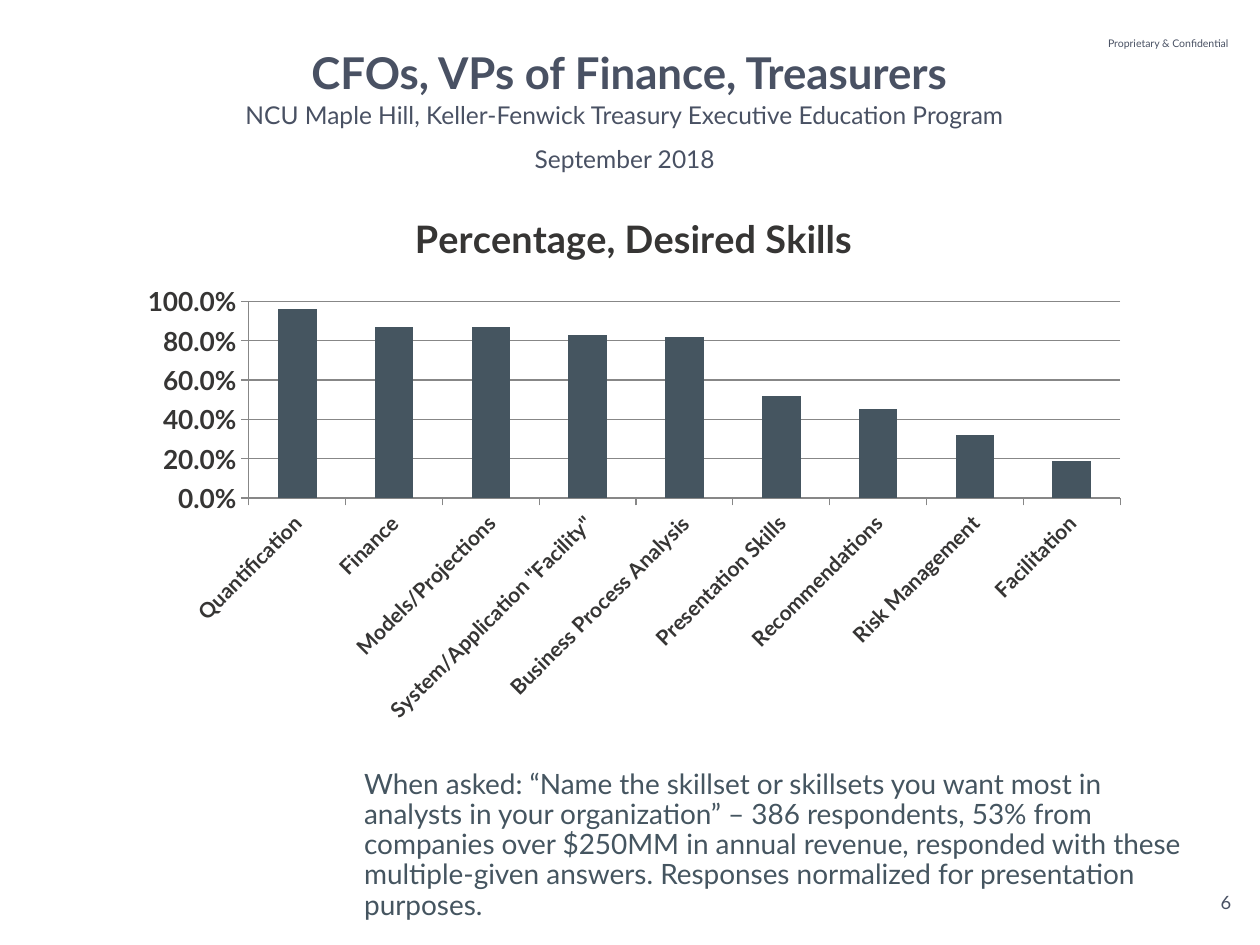
"""Build the desired treasury skills slide."""
import pptx
import pptx.util
import pptx.dml.color
import pptx.enum.text
import pptx.enum.chart
import pptx.chart.data
import pptx.oxml
import pptx.oxml.ns

Pt = pptx.util.Pt
Align = pptx.enum.text.PP_ALIGN
Anchor = pptx.enum.text.MSO_ANCHOR
HUES = {"head": "495163", "bar": "455560", "dark": "363534", "grid": "878787"}
SKILLS = {
    "Quantification": 0.96,
    "Finance": 0.87,
    "Models/Projections": 0.87,
    'System/Application "Facility"': 0.83,
    "Business Process Analysis": 0.82,
    "Presentation Skills": 0.52,
    "Recommendations": 0.45,
    "Risk Management": 0.32,
    "Facilitation": 0.19,
}


class Deck:
    """Hold the style and the current slide."""

    def __init__(self, face):
        """Start a deck with one title-only slide."""
        self.face = face
        self.show = pptx.Presentation()
        self.show.slide_width, self.show.slide_height = Pt(720), Pt(540)
        self.slide = self.show.slides.add_slide(self.show.slide_layouts[5])

    def hue(self, name):
        """Return a named colour."""
        return pptx.dml.color.RGBColor.from_string(HUES[name])

    def style(self, font, size, hue, bold=False):
        """Format a font."""
        font.name, font.size, font.bold = self.face, Pt(size), bold
        font.color.rgb = self.hue(hue)

    def fill(self, shape, box, lines, size, hue="head", bold=False,
             align=Align.LEFT, anchor=Anchor.TOP, space=None, gap=0, pad=None, wrap=True):
        """Place a shape and write its paragraphs."""
        shape.left, shape.top, shape.width, shape.height = map(Pt, box)
        frame = shape.text_frame
        frame.word_wrap, frame.vertical_anchor = wrap, anchor
        frame.auto_size = pptx.enum.text.MSO_AUTO_SIZE.NONE
        if pad is not None:
            frame.margin_left = frame.margin_right = Pt(pad)
            frame.margin_top = frame.margin_bottom = Pt(pad)
        frame.text = "\n".join(lines)
        for para in frame.paragraphs:
            para.alignment, para.line_spacing = align, space
            para.space_before = Pt(gap)
            self.style(para.font, size, hue, bold)

    def title(self, box, line, size):
        """Fill the title placeholder."""
        self.fill(self.slide.shapes.title, box, [line], size, bold=True,
                  align=Align.CENTER, space=0.9)

    def text(self, box, lines, size, **style):
        """Add a text box."""
        shape = self.slide.shapes.add_textbox(*map(Pt, box))
        self.fill(shape, box, lines, size, **style)

    def axis(self, axis, size):
        """Format the labels and line of an axis."""
        self.style(axis.tick_labels.font, size, "dark", True)
        axis.format.line.color.rgb = self.hue("grid")
        axis.major_tick_mark = pptx.enum.chart.XL_TICK_MARK.OUTSIDE
        axis.minor_tick_mark = pptx.enum.chart.XL_TICK_MARK.NONE

    def chart(self, box, title, data):
        """Add a column chart of shares."""
        table = pptx.chart.data.CategoryChartData(number_format="0.0%")
        table.categories = list(data)
        table.add_series("Series 1", list(data.values()))
        kind = pptx.enum.chart.XL_CHART_TYPE.COLUMN_CLUSTERED
        chart = self.slide.shapes.add_chart(kind, *map(Pt, box), table).chart
        self.style(chart.font, 18, "dark")
        chart.has_legend, chart.has_title = False, True
        chart.chart_title.include_in_layout = False
        frame = chart.chart_title.text_frame
        frame.text = title
        self.style(frame.paragraphs[0].font, 21.6, "dark", True)
        plot = chart.plots[0]
        plot.gap_width, plot.vary_by_categories = 150, False
        bars = plot.series[0].format.fill
        bars.solid()
        bars.fore_color.rgb = self.hue("bar")
        cats, vals = chart.category_axis, chart.value_axis
        self.axis(cats, 12)
        self.axis(vals, 15)
        body = cats.tick_labels.font._element.getparent().getparent().getparent()
        body.find(pptx.oxml.ns.qn("a:bodyPr")).set("rot", "-2700000")
        vals.minimum_scale, vals.maximum_scale, vals.major_unit = 0, 1, 0.2
        vals.tick_labels.number_format = "0.0%"
        vals.tick_labels.number_format_is_linked = False
        vals.has_major_gridlines = True
        vals.major_gridlines.format.line.color.rgb = self.hue("grid")
        self.inset(chart, x=0.12, y=0.21, w=0.86, h=0.36)

    def inset(self, chart, **parts):
        """Fix the inner plot area as shares of the chart."""
        area = chart._chartSpace.chart.plotArea
        for old in area.findall(pptx.oxml.ns.qn("c:layout")):
            area.remove(old)
        modes = "".join(f'<c:{key}Mode val="edge"/>' for key in "xy")
        sizes = "".join(f'<c:{key} val="{val}"/>' for key, val in parts.items())
        area.insert(0, pptx.oxml.parse_xml(
            f'<c:layout {pptx.oxml.ns.nsdecls("c")}><c:manualLayout>'
            f'<c:layoutTarget val="inner"/>{modes}{sizes}</c:manualLayout></c:layout>'))


def main():
    """Build and save the slide."""
    deck = Deck("Lato")
    deck.text((466, 10, 243, 29), ["Proprietary & Confidential"], 6,
              align=Align.RIGHT, anchor=Anchor.MIDDLE)
    deck.text((201, 436.5, 495, 166),
              ["When asked: “Name the skillset or skillsets you want most in analysts "
               "in your organization” – 386 respondents, 53% from companies over $250MM "
               "in annual revenue, responded with these multiple-given answers. "
               "Responses normalized for presentation purposes."],
              16, hue="bar", space=0.9, gap=10)
    deck.chart((72.7, 106.5, 579, 312.5), "Percentage, Desired Skills", SKILLS)
    deck.title((25, 26, 669, 63), "CFOs, VPs of Finance, Treasurers", 25)
    deck.text((107, 55.5, 500, 34),
              ["NCU Maple Hill, Keller-Fenwick Treasury Executive Education Program",
               "September 2018"],
              14, align=Align.CENTER, space=0.9, gap=10)
    deck.text((694, 509, 13, 13), ["6"], 10.5, align=Align.CENTER, pad=0, wrap=False)
    deck.show.save("out.pptx")


if __name__ == "__main__":
    main()
